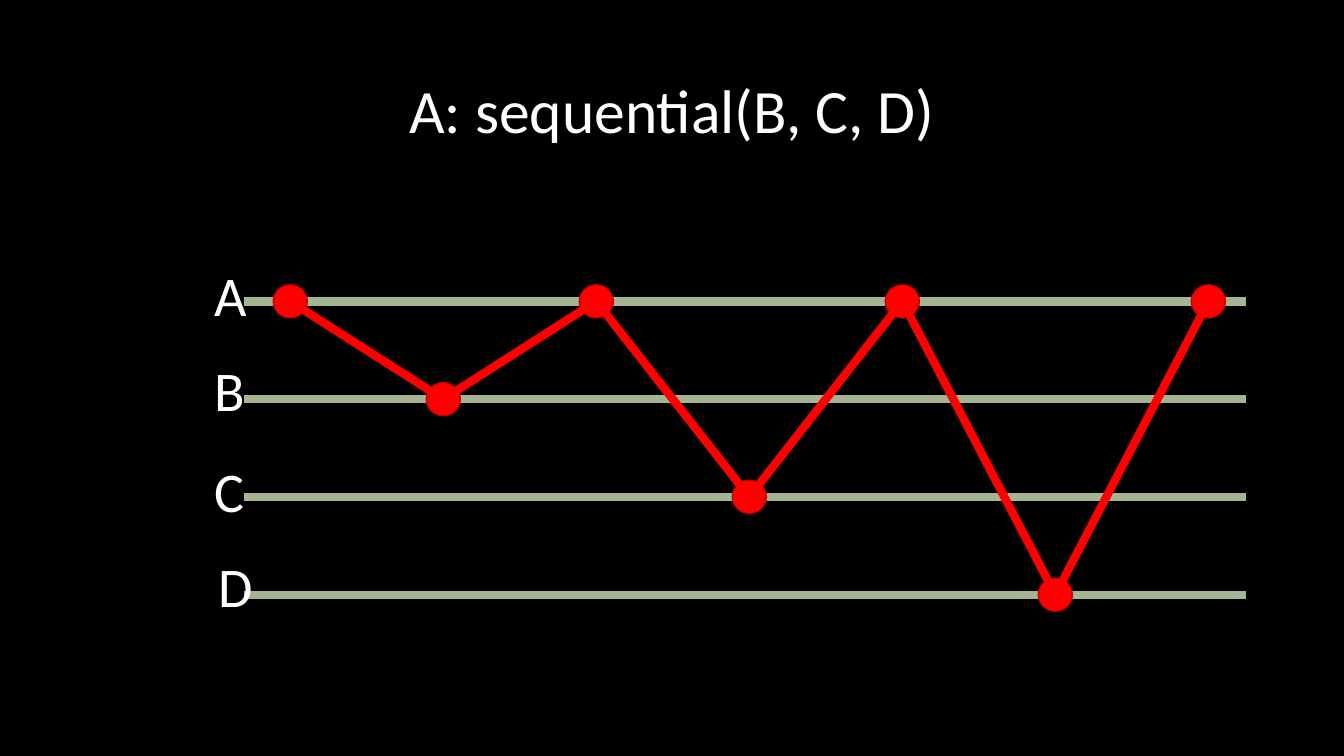
"""Draw the call order of A over four lanes as one slide."""
from dataclasses import dataclass
from itertools import pairwise

from lxml.etree import SubElement
from pptx import Presentation
from pptx.dml.color import RGBColor as Rgb
from pptx.enum.shapes import MSO_CONNECTOR as Link, MSO_SHAPE as Form
from pptx.enum.text import MSO_ANCHOR as Anchor, MSO_AUTO_SIZE as Fit, PP_ALIGN as Align
from pptx.oxml.ns import qn
from pptx.slide import Slide
from pptx.text.text import TextFrame as Frame
from pptx.util import Pt


@dataclass(frozen=True)
class Theme:
    font: str = "Calibri"
    back: Rgb = Rgb(0, 0, 0)
    text: Rgb = Rgb(255, 255, 255)
    lane: Rgb = Rgb(0xA5, 0xB5, 0x92)
    call: Rgb = Rgb(255, 0, 0)
    edge: Rgb = Rgb(0xC0, 0, 0)
    title: float = 44
    label: float = 40
    stroke: float = 6
    rim: float = 0.85


@dataclass(frozen=True)
class Lane:
    name: str
    y: float
    left: float
    top: float


@dataclass(frozen=True)
class Dot:
    x: float
    y: float


THEME = Theme()
FIRST, GAP = 215.28, 69.84
START, STEP = 207.36, 109.3
LABELS = (("A", 153.2, 182.9), ("B", 153.2, 250.6),
          ("C", 153.2, 322.6), ("D", 156.4, 390.2))
LANES = [Lane(name, FIRST + GAP * i, left, top)
         for i, (name, left, top) in enumerate(LABELS)]
ROWS = {lane.name: lane.y for lane in LANES}
DOTS = [Dot(START + STEP * i, ROWS[name]) for i, name in enumerate("ABACADA")]


def write(frame: Frame, text: str, *, size: float, space: float = 1) -> None:
    par = frame.paragraphs[0]
    par.alignment = Align.CENTER
    par.line_spacing = space
    run = par.add_run()
    run.text = text
    run.font.name = THEME.font
    run.font.size = Pt(size)
    run.font.color.rgb = THEME.text


def draw_line(slide: Slide, a: Dot, b: Dot, color: Rgb) -> None:
    line = slide.shapes.add_connector(
        Link.STRAIGHT, Pt(a.x), Pt(a.y), Pt(b.x), Pt(b.y))
    line.line.color.rgb = color
    line.line.width = Pt(THEME.stroke)
    SubElement(line._element.spPr, qn("a:effectLst"))


def draw_label(slide: Slide, lane: Lane) -> None:
    box = slide.shapes.add_textbox(Pt(lane.left), Pt(lane.top), Pt(3.6), Pt(55.4))
    frame = box.text_frame
    frame.word_wrap = True
    frame.auto_size = Fit.SHAPE_TO_FIT_TEXT
    frame.margin_left = frame.margin_right = Pt(0)
    write(frame, lane.name, size=THEME.label)


def draw_dot(slide: Slide, dot: Dot, wide: float = 24.5, high: float = 23.8) -> None:
    oval = slide.shapes.add_shape(
        Form.OVAL, Pt(dot.x - wide / 2), Pt(dot.y - high / 2), Pt(wide), Pt(high))
    oval.shadow.inherit = False
    oval.fill.solid()
    oval.fill.fore_color.rgb = THEME.call
    oval.line.color.rgb = THEME.edge
    oval.line.width = Pt(THEME.rim)


def draw_title(slide: Slide, text: str) -> None:
    title = slide.shapes.title
    title.left, title.top = Pt(66), Pt(28.8)
    title.width, title.height = Pt(828), Pt(104.4)
    frame = title.text_frame
    frame.auto_size = Fit.NONE
    frame.vertical_anchor = Anchor.MIDDLE
    write(frame, text, size=THEME.title, space=0.9)


def main() -> None:
    deck = Presentation()
    deck.slide_width, deck.slide_height = Pt(960), Pt(540)
    slide = deck.slides.add_slide(deck.slide_layouts[5])
    slide.background.fill.solid()
    slide.background.fill.fore_color.rgb = THEME.back
    draw_title(slide, "A: sequential(B, C, D)")
    for lane in LANES:
        draw_line(slide, Dot(174.24, lane.y), Dot(889.92, lane.y), THEME.lane)
        draw_label(slide, lane)
    for dot in DOTS:
        draw_dot(slide, dot)
    for a, b in pairwise(DOTS):
        draw_line(slide, a, b, THEME.call)
    deck.save("out.pptx")


if __name__ == "__main__":
    main()
